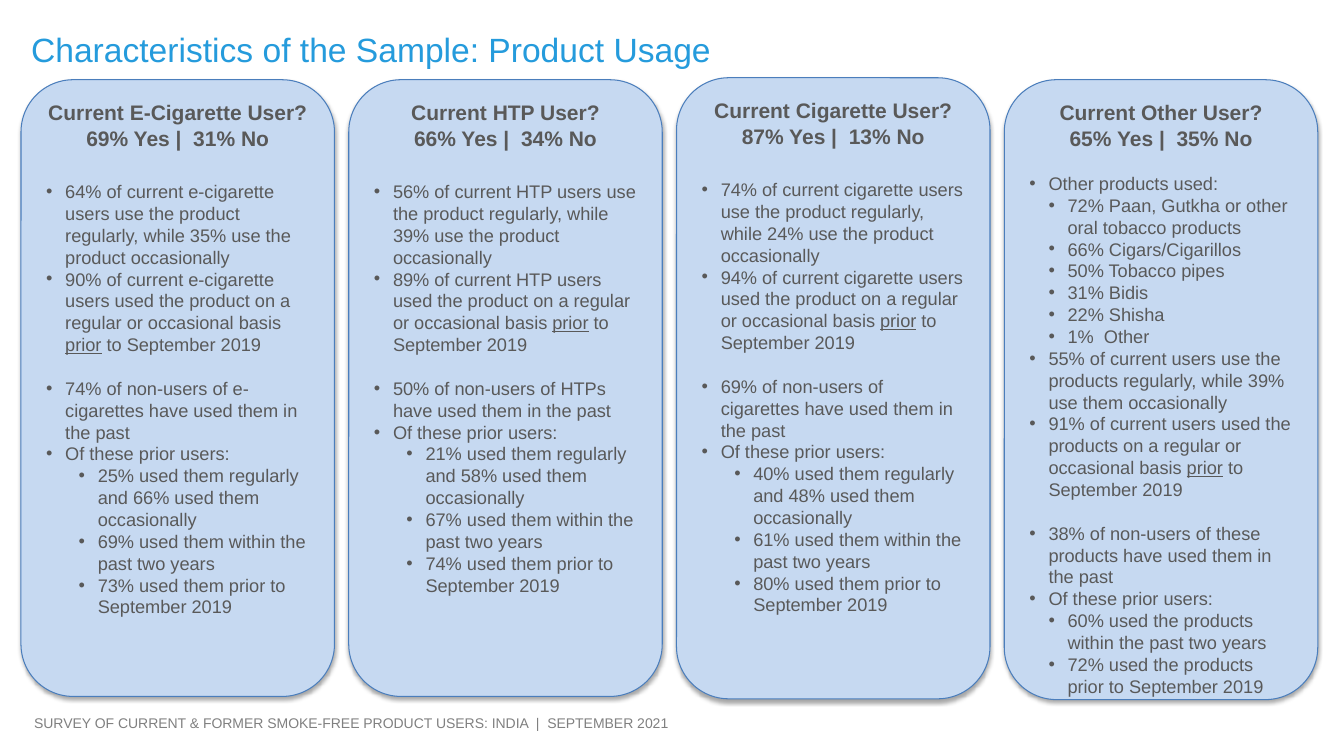
from dataclasses import dataclass
from lxml import etree
from pptx import Presentation
from pptx import util as u
from pptx.dml.color import RGBColor
from pptx.enum import shapes, text
from pptx.oxml import parse_xml
from pptx.oxml.ns import nsdecls, qn

# Content: strings are main bullets, lists are their sub-bullets, _word_ is underlined
TITLE = "Characteristics of the Sample: Product Usage"
FOOTER = "SURVEY OF CURRENT & FORMER SMOKE-FREE PRODUCT USERS: INDIA  |  SEPTEMBER 2021"
PRIOR_USERS = "Of these prior users:"
CARDS = [
    dict(
        heading=["Current E-Cigarette User?", "69% Yes |  31% No"],
        top=2.01, height=15.54, sub_indent=1.3, heading_gap=21.4,
        groups=[
            ["64% of current e-cigarette users use the product regularly, while 35% use the product occasionally",
             "90% of current e-cigarette users used the product on a regular or occasional basis _prior_ to September 2019"],
            ["74% of non-users of e-cigarettes have used them in the past", PRIOR_USERS,
             ["25% used them regularly and 66% used them occasionally",
              "69% used them within the past two years",
              "73% used them prior to September 2019"]],
        ]),
    dict(
        heading=["Current HTP User?", "66% Yes |  34% No"],
        top=2.01, height=15.54, sub_indent=1.3, heading_gap=21.4,
        groups=[
            ["56% of current HTP users use the product regularly, while 39% use the product occasionally",
             "89% of current HTP users used the product on a regular or occasional basis _prior_ to September 2019"],
            ["50% of non-users of HTPs have used them in the past", PRIOR_USERS,
             ["21% used them regularly and 58% used them occasionally",
              "67% used them within the past two years",
              "74% used them prior to September 2019"]],
        ]),
    dict(
        heading=["Current Cigarette User?", "87% Yes |  13% No"],
        top=1.96, height=15.65, sub_indent=1.3, heading_gap=21.4,
        groups=[
            ["74% of current cigarette users use the product regularly, while 24% use the product occasionally",
             "94% of current cigarette users used the product on a regular or occasional basis _prior_ to September 2019"],
            ["69% of non-users of cigarettes have used them in the past", PRIOR_USERS,
             ["40% used them regularly and 48% used them occasionally",
              "61% used them within the past two years",
              "80% used them prior to September 2019"]],
        ]),
    dict(
        heading=["Current Other User?", "65% Yes |  35% No"],
        top=2.01, height=15.62, sub_indent=0.96, heading_gap=15.6,
        groups=[
            ["Other products used:",
             ["72% Paan, Gutkha or other oral tobacco products", "66% Cigars/Cigarillos",
              "50% Tobacco pipes", "31% Bidis", "22% Shisha", "1%  Other"],
             "55% of current users use the products regularly, while 39% use them occasionally",
             "91% of current users used the products on a regular or occasional basis _prior_ to September 2019"],
            ["38% of non-users of these products have used them in the past", PRIOR_USERS,
             ["60% used the products within the past two years",
              "72% used the products prior to September 2019"]],
        ]),
]


@dataclass(frozen=True)
class Theme:
    font: str = "Arial"
    title: str = "259BDC"
    body: str = "595959"
    footer: str = "808080"
    card: str = "C6D9F1"
    border: str = "4B7EBC"
    title_size: float = 24
    heading_size: float = 15
    body_size: float = 13
    footer_size: float = 10


THEME = Theme()
CARD_LEFT, CARD_PITCH, CARD_WIDTH = 0.53, 8.26, 7.9
HANGING = 0.48
GROUP_GAP = 15.6


def format_runs(paragraph, size, color, bold=False):
    for run in paragraph.runs:
        run.font.name = THEME.font
        run.font.size = u.Pt(size)
        run.font.bold = bold
        run.font.color.rgb = RGBColor.from_string(color)


def add_bullet(frame, wording, level, indent, gap):
    paragraph = frame.add_paragraph()
    paragraph.level = level
    paragraph.alignment = text.PP_ALIGN.LEFT
    paragraph.space_before = u.Pt(gap)
    for index, part in enumerate(wording.split("_")):
        run = paragraph.add_run()
        run.text = part
        if index % 2:
            run.font.underline = True
    format_runs(paragraph, THEME.body_size, THEME.body)
    properties = paragraph._p.get_or_add_pPr()
    properties.set("marL", str(u.Cm(indent)))
    properties.set("indent", str(-u.Cm(HANGING)))
    etree.SubElement(properties, qn("a:buFont")).set("typeface", THEME.font)
    etree.SubElement(properties, qn("a:buChar")).set("char", "•")


def add_soft_shadow(shape):
    shape.shadow.inherit = False
    effects = shape._element.spPr.find(qn("a:effectLst"))
    effects.append(parse_xml(
        f'<a:outerShdw {nsdecls("a")} blurRad="{u.Pt(3.1)}" dist="{u.Pt(1.8)}" '
        'dir="5400000" rotWithShape="0"><a:srgbClr val="000000">'
        '<a:alpha val="35000"/></a:srgbClr></a:outerShdw>'))


def add_card(slide, column, card):
    shape = slide.shapes.add_shape(
        shapes.MSO_SHAPE.ROUNDED_RECTANGLE, u.Cm(CARD_LEFT + column * CARD_PITCH),
        u.Cm(card["top"]), u.Cm(CARD_WIDTH), u.Cm(card["height"]))
    shape.fill.solid()
    shape.fill.fore_color.rgb = RGBColor.from_string(THEME.card)
    shape.line.color.rgb = RGBColor.from_string(THEME.border)
    shape.line.width = u.Pt(0.75)
    add_soft_shadow(shape)

    # Heading
    frame = shape.text_frame
    frame.word_wrap = True
    frame.vertical_anchor = text.MSO_ANCHOR.TOP
    frame.text = "\n".join(card["heading"])
    for paragraph in frame.paragraphs:
        paragraph.alignment = text.PP_ALIGN.CENTER
        format_runs(paragraph, THEME.heading_size, THEME.body, bold=True)

    # Bullet groups, each set apart by the space before its first bullet
    gap = card["heading_gap"]
    for group in card["groups"]:
        for item in group:
            if isinstance(item, list):
                for wording in item:
                    add_bullet(frame, wording, 1, card["sub_indent"], 0)
            else:
                add_bullet(frame, item, 0, HANGING, gap)
            gap = 0
        gap = GROUP_GAP


def main():
    presentation = Presentation()
    presentation.slide_width, presentation.slide_height = u.Cm(33.87), u.Cm(19.05)
    slide = presentation.slides.add_slide(presentation.slide_layouts[5])

    # Title
    title = slide.shapes.title
    title.left, title.top, title.width, title.height = u.Cm(0.53), u.Cm(0.61), u.Cm(31.27), u.Cm(1.47)
    title.text_frame.text = TITLE
    title.text_frame.vertical_anchor = text.MSO_ANCHOR.TOP
    title.text_frame.auto_size = text.MSO_AUTO_SIZE.NONE
    title.text_frame.paragraphs[0].alignment = text.PP_ALIGN.LEFT
    format_runs(title.text_frame.paragraphs[0], THEME.title_size, THEME.title)

    # Cards
    for column, card in enumerate(CARDS):
        add_card(slide, column, card)

    # Footer
    footer = slide.shapes.add_textbox(u.Cm(0.61), u.Cm(17.88), u.Cm(31.57), u.Cm(0.69))
    footer.text_frame.word_wrap = True
    footer.text_frame.text = FOOTER
    format_runs(footer.text_frame.paragraphs[0], THEME.footer_size, THEME.footer)

    presentation.save("out.pptx")


if __name__ == "__main__":
    main()
